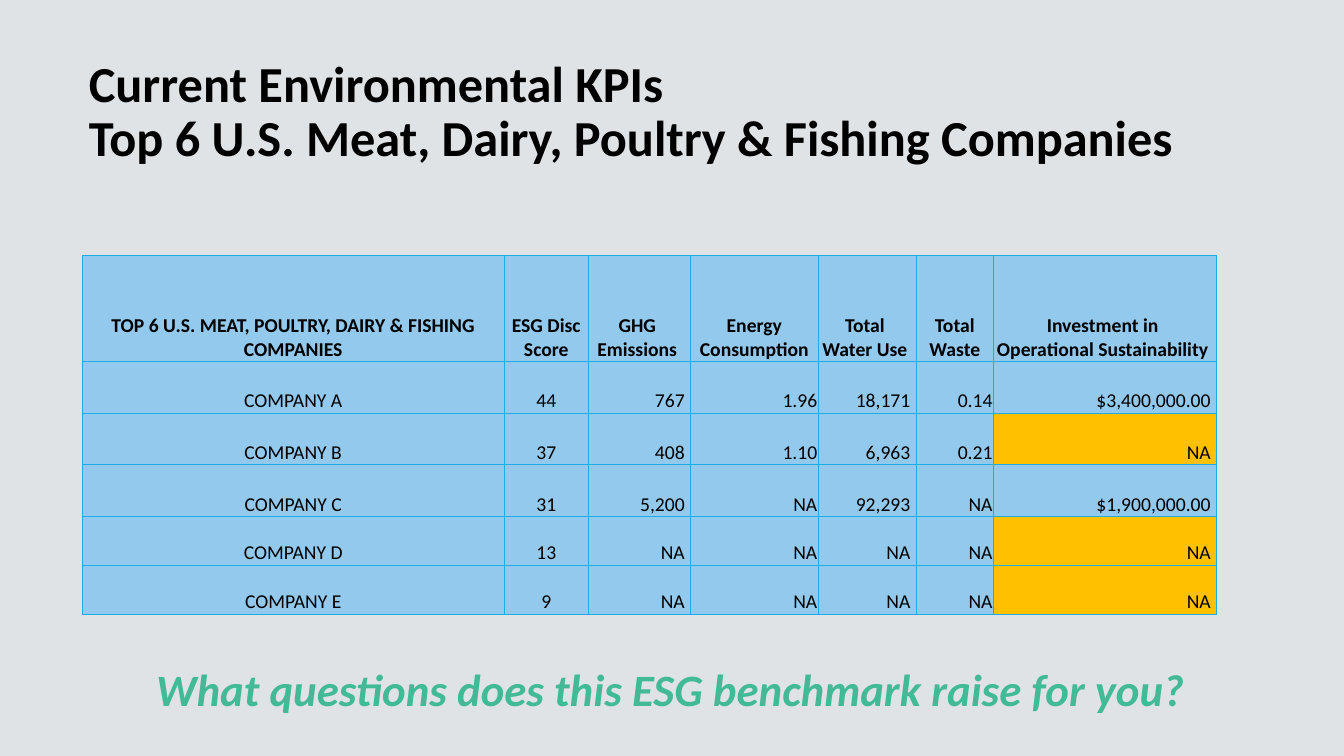
"""Build the slide comparing environmental KPIs of food companies."""
from dataclasses import dataclass

import lxml.etree
import pptx
import pptx.dml.color
import pptx.enum.text
import pptx.oxml.ns
import pptx.slide
import pptx.table
import pptx.text.text
import pptx.util

Pt = pptx.util.Pt
Align = pptx.enum.text.PP_ALIGN
Anchor = pptx.enum.text.MSO_ANCHOR
AutoSize = pptx.enum.text.MSO_AUTO_SIZE

FONT = "Calibri"
COLORS = {
    "background": "DFE3E5",
    "text": "000000",
    "cell": "92C9EC",
    "missing": "FFC000",
    "border": "1CADE4",
    "question": "42BA97",
}


@dataclass(frozen=True)
class Kpi:
    heading: str
    width: float
    align: Align = Align.RIGHT
    right_inset: float = 0.72


@dataclass(frozen=True)
class Company:
    values: tuple[str, ...]
    height: float = 36.9


KPIS = (
    Kpi("TOP 6 U.S. MEAT, POULTRY, DAIRY & FISHING COMPANIES", 301, Align.CENTER),
    Kpi("ESG Disc Score", 60.5, Align.CENTER),
    Kpi("GHG Emissions", 72.7, right_inset=4),
    Kpi("Energy Consumption", 91.4),
    Kpi("Total Water Use", 69.8, right_inset=4),
    Kpi("Total Waste", 55.4),
    Kpi("Investment in\nOperational Sustainability", 159.2, right_inset=4),
)
COMPANIES = (
    Company(("COMPANY A", "44", "767", "1.96", "18,171", "0.14", "$3,400,000.00")),
    Company(("COMPANY B", "37", "408", "1.10", "6,963", "0.21", "NA")),
    Company(("COMPANY C", "31", "5,200", "NA", "92,293", "NA", "$1,900,000.00")),
    Company(("COMPANY D", "13", "NA", "NA", "NA", "NA", "NA"), 34.9),
    Company(("COMPANY E", "9", "NA", "NA", "NA", "NA", "NA"), 34.9),
)
HEADING_HEIGHT = 75.6


def rgb(name: str) -> pptx.dml.color.RGBColor:
    """Return the named colour."""
    return pptx.dml.color.RGBColor.from_string(COLORS[name])


def write_text(frame: pptx.text.text.TextFrame, text: str, *, size: float,
               color: str = "text", bold: bool = False, italic: bool = False,
               align: Align = Align.LEFT, spacing: float = 1.0) -> None:
    """Write text, with newlines between paragraphs and vertical tabs as breaks."""
    frame.text = text
    for paragraph in frame.paragraphs:
        paragraph.alignment = align
        paragraph.line_spacing = spacing
        for run in paragraph.runs:
            font = run.font
            font.name, font.size = FONT, Pt(size)
            font.bold, font.italic = bold, italic
            font.color.rgb = rgb(color)


def outline_cell(cell: pptx.table._Cell) -> None:
    """Draw a thin border on all four sides of a cell."""
    qn = pptx.oxml.ns.qn
    properties = cell._tc.get_or_add_tcPr()
    for index, side in enumerate("LRTB"):
        line = lxml.etree.Element(qn(f"a:ln{side}"), w=str(Pt(0.5)))
        fill = lxml.etree.SubElement(line, qn("a:solidFill"))
        lxml.etree.SubElement(fill, qn("a:srgbClr"), val=COLORS["border"])
        properties.insert(index, line)


def fill_cell(cell: pptx.table._Cell, text: str, kpi: Kpi, *,
              heading: bool = False, color: str = "cell") -> None:
    """Format one table cell and write its text."""
    outline_cell(cell)
    cell.fill.solid()
    cell.fill.fore_color.rgb = rgb(color)
    cell.vertical_anchor = Anchor.BOTTOM
    cell.margin_left = cell.margin_top = Pt(0.72)
    cell.margin_right, cell.margin_bottom = Pt(kpi.right_inset), Pt(0)
    write_text(cell.text_frame, text, size=14, bold=heading,
               align=Align.CENTER if heading else kpi.align)


def add_title(slide: pptx.slide.Slide) -> None:
    """Place and write the slide title."""
    title = slide.shapes.title
    title.left, title.top = Pt(56.2), Pt(28.8)
    title.width, title.height = Pt(838), Pt(104.4)
    frame = title.text_frame
    frame.word_wrap = True
    frame.auto_size = AutoSize.NONE
    frame.vertical_anchor = Anchor.MIDDLE
    write_text(frame, "Current Environmental KPIs\vTop 6 U.S. Meat, Dairy, "
               "Poultry & Fishing Companies", size=36, bold=True, spacing=0.9)


def add_benchmark(slide: pptx.slide.Slide) -> None:
    """Add the table of companies and their KPIs."""
    heights = [HEADING_HEIGHT, *(company.height for company in COMPANIES)]
    table = slide.shapes.add_table(
        len(heights), len(KPIS), Pt(59), Pt(182.6),
        Pt(sum(kpi.width for kpi in KPIS)), Pt(sum(heights))).table
    table.horz_banding = False
    for row, height in zip(table.rows, heights):
        row.height = Pt(height)
    for column, kpi in enumerate(KPIS):
        table.columns[column].width = Pt(kpi.width)
        fill_cell(table.cell(0, column), kpi.heading, kpi, heading=True)
        for row, company in enumerate(COMPANIES, start=1):
            value = company.values[column]
            missing = kpi is KPIS[-1] and value == "NA"
            fill_cell(table.cell(row, column), value, kpi,
                      color="missing" if missing else "cell")


def add_question(slide: pptx.slide.Slide) -> None:
    """Add the closing question below the table."""
    question = slide.shapes.add_textbox(Pt(104.4), Pt(469.4), Pt(878.4), Pt(46))
    frame = question.text_frame
    frame.word_wrap = True
    frame.auto_size = AutoSize.SHAPE_TO_FIT_TEXT
    write_text(frame, "What questions does this ESG benchmark raise for you?",
               size=32, color="question", bold=True, italic=True)


def main() -> None:
    """Build and save the presentation."""
    presentation = pptx.Presentation()
    presentation.slide_width, presentation.slide_height = Pt(960), Pt(540)
    slide = presentation.slides.add_slide(presentation.slide_layouts[5])
    slide.background.fill.solid()
    slide.background.fill.fore_color.rgb = rgb("background")
    add_title(slide)
    add_benchmark(slide)
    add_question(slide)
    presentation.save("out.pptx")


if __name__ == "__main__":
    main()
